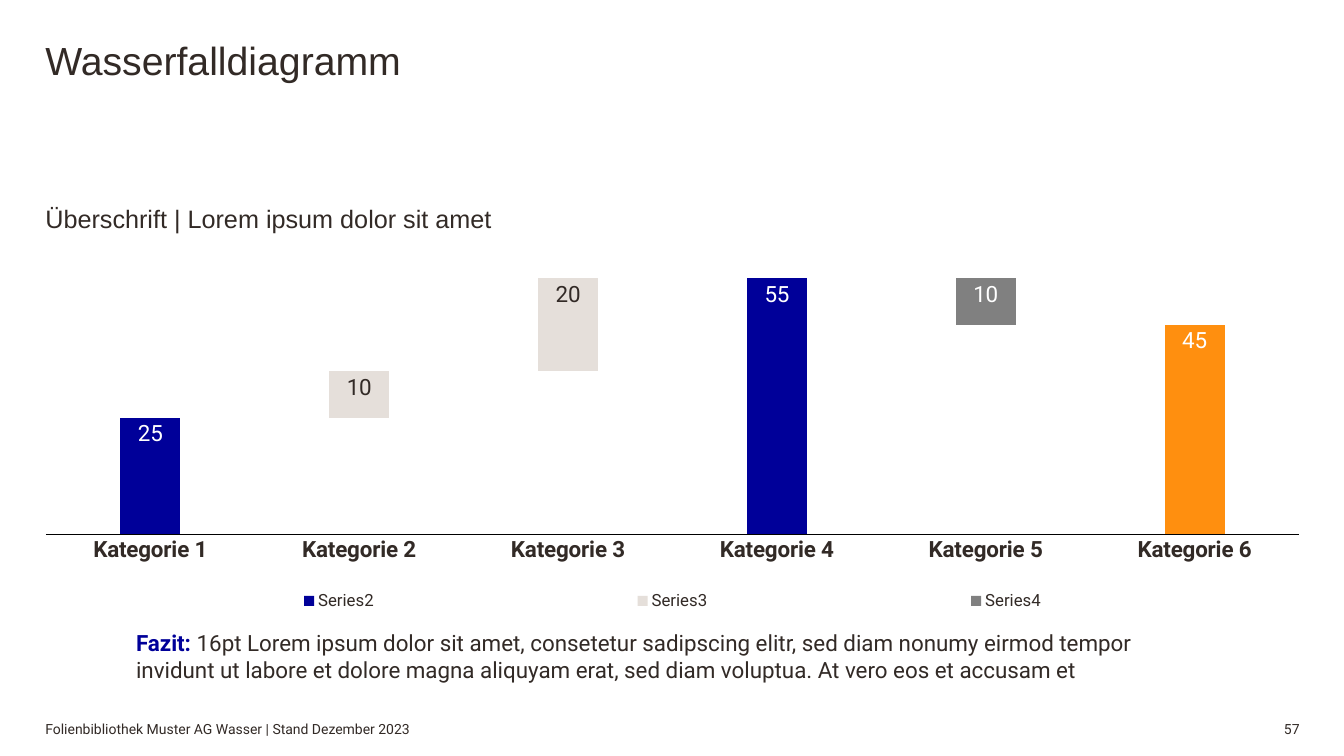
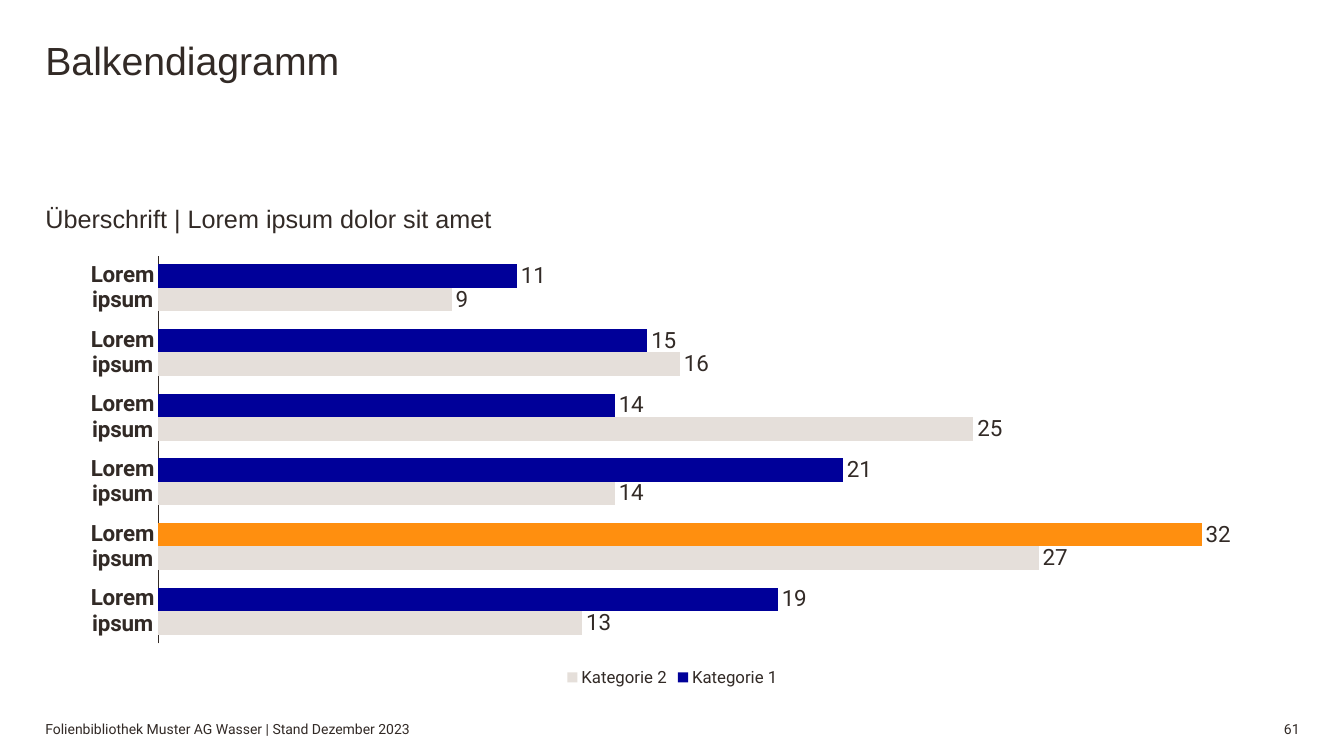
from lxml import etree
from pptx import Presentation
from pptx.chart.data import CategoryChartData as ChartData
from pptx.dml.color import RGBColor
from pptx.enum.chart import XL_CHART_TYPE as Kind
from pptx.enum.chart import XL_LABEL_POSITION as Spot
from pptx.enum.chart import XL_LEGEND_POSITION as Side
from pptx.enum.chart import XL_TICK_LABEL_POSITION as Place
from pptx.enum.chart import XL_TICK_MARK as Tick
from pptx.enum.text import MSO_ANCHOR as Anchor
from pptx.enum.text import PP_ALIGN as Align
from pptx.oxml.ns import qn
from pptx.util import Inches, Pt

# Shared style
INK, BLUE, SAND = "322A26", "000099", "E5DFDA"
GREY, ORANGE, WHITE, BLACK = "808080", "FF8F0F", "FFFFFF", "000000"
HEAD, BODY = "Arial", "Roboto"
LEFT, WIDE = 0.45, 12.44
FOOT = "Folienbibliothek Muster AG Wasser | Stand Dezember 2023"
SUB = "Überschrift | Lorem ipsum dolor sit amet"


def color(code):
    return RGBColor.from_string(code)


def style(font, size, name=BODY, tint=INK, bold=False):
    font.size, font.name, font.bold = Pt(size), name, bold
    font.color.rgb = color(tint)


# Text
def setup(frame, anchor=Anchor.TOP, wrap=True):
    frame.margin_left = frame.margin_right = 0
    frame.margin_top = frame.margin_bottom = 0
    frame.vertical_anchor, frame.word_wrap = anchor, wrap


def add_text(slide, box, text, size, name=BODY, anchor=Anchor.TOP,
             align=Align.LEFT, after=0, wrap=True):
    frame = slide.shapes.add_textbox(*map(Inches, box)).text_frame
    setup(frame, anchor, wrap)
    frame.text = text
    para = frame.paragraphs[0]
    para.alignment, para.space_after = align, Pt(after)
    for run in para.runs:
        style(run.font, size, name)
    return para


def add_page(deck, title, number):
    slide = deck.slides.add_slide(deck.slide_layouts[5])
    head = slide.shapes.title
    head.left, head.top = Inches(LEFT), Inches(0.36)
    head.width, head.height = Inches(9.61), Inches(0.55)
    setup(head.text_frame)
    head.text_frame.text = title
    para = head.text_frame.paragraphs[0]
    para.alignment = Align.LEFT
    style(para.runs[0].font, 28, HEAD)
    add_text(slide, (LEFT, 7.16, 11.06, 0.16), FOOT, 10, anchor=Anchor.BOTTOM)
    add_text(slide, (12.58, 7.16, 0.31, 0.16), number, 10,
             anchor=Anchor.BOTTOM, align=Align.RIGHT, wrap=False)
    add_text(slide, (LEFT, 2.02, WIDE, 0.35), SUB, 18, HEAD, after=4)
    return slide


def add_note(slide, lead, text):
    para = add_text(slide, (1.35, 6.15, 11.54, 0.71), lead, 16,
                    anchor=Anchor.MIDDLE, after=6)
    style(para.runs[0].font, 16, tint=BLUE, bold=True)
    for row, line in enumerate(text):
        if row:
            para.add_line_break()
        run = para.add_run()
        run.text = line
        style(run.font, 16)


# Charts
def set_layout(node, index, box, inner=False):
    for old in node.findall(qn("c:layout")):
        node.remove(old)
    layout = etree.Element(qn("c:layout"))
    node.insert(index, layout)
    manual = etree.SubElement(layout, qn("c:manualLayout"))
    items = [("layoutTarget", "inner")] if inner else []
    items += [("xMode", "edge"), ("yMode", "edge"), *zip("xywh", box)]
    for tag, val in items:
        etree.SubElement(manual, qn("c:" + tag)).set("val", str(val))


def hide_entry(legend, index):
    entry = etree.Element(qn("c:legendEntry"))
    etree.SubElement(entry, qn("c:idx")).set("val", str(index))
    etree.SubElement(entry, qn("c:delete")).set("val", "1")
    legend.insert(1, entry)


def paint(series, fill, label, spot, accent):
    series.invert_if_negative = False
    if fill is None:
        series.format.fill.background()
        return
    series.format.fill.solid()
    series.format.fill.fore_color.rgb = color(fill)
    if accent is not None:
        point = series.points[accent].format.fill
        point.solid()
        point.fore_color.rgb = color(ORANGE)
    labels = series.data_labels
    labels.show_value, labels.position = True, spot
    style(labels.font, 16, tint=label)


def add_chart(slide, kind, high, cats, rows, gap, lap, top, plot, spot,
              line=INK):
    """Each row holds name, values, fill, label colour and accent point."""
    data = ChartData()
    data.categories = cats
    for name, vals, *_ in rows:
        data.add_series(name, vals)
    box = map(Inches, (LEFT, 2.53, WIDE, high))
    chart = slide.shapes.add_chart(kind, *box, data).chart
    chart.has_title = False
    style(chart.font, 10)
    bars = chart.plots[0]
    bars.gap_width, bars.overlap, bars.vary_by_categories = gap, lap, False
    for series, (_, _, fill, label, accent) in zip(bars.series, rows):
        paint(series, fill, label, spot, accent)

    # Axes
    value, cat = chart.value_axis, chart.category_axis
    value.minimum_scale, value.maximum_scale = 0, top
    value.has_major_gridlines = value.visible = False
    cat.major_tick_mark = cat.minor_tick_mark = Tick.NONE
    cat.tick_label_position = Place.NEXT_TO_AXIS
    cat.has_major_gridlines = False
    cat.format.line.width = Pt(0.75)
    cat.format.line.color.rgb = color(line)
    style(cat.tick_labels.font, 16, bold=True)

    # Legend and plot area
    chart.has_legend = True
    chart.legend.position = Side.BOTTOM
    chart.legend.include_in_layout = False
    style(chart.legend.font, 12)
    area = chart.element.find(".//" + qn("c:plotArea"))
    set_layout(area, 0, plot, inner=True)
    return chart


def add_falls(deck):
    slide = add_page(deck, "Wasserfalldiagramm", "57")
    cats = [f"Kategorie {n}" for n in range(1, 7)]
    no = None
    rows = [
        ("Series1", (no, 25, 35, no, 45, no), no, no, no),
        ("Series2", (25, no, no, 55, no, 45), BLUE, WHITE, 5),
        ("Series3", (no, 10, 20, no, no, no), SAND, INK, no),
        ("Series4", (no, no, no, no, 10, no), GREY, WHITE, no),
    ]
    chart = add_chart(slide, Kind.COLUMN_STACKED, 3.9, cats, rows, 250, 100,
                      60, (0, 0, 1, 0.71), Spot.INSIDE_END, BLACK)
    legend = chart.element.find(".//" + qn("c:legend"))
    set_layout(legend, 1, (0, 0.84, 1, 0.08))
    hide_entry(legend, 0)
    add_note(slide, "Fazit: ", (
        "16pt Lorem ipsum dolor sit amet, consetetur sadipscing elitr, "
        "sed diam nonumy eirmod tempor",
        "invidunt ut labore et dolore magna aliquyam erat, "
        "sed diam voluptua. At vero eos et accusam et"))


def add_bars(deck):
    slide = add_page(deck, "Balkendiagramm", "61")
    rows = [
        ("Kategorie 1", (11, 15, 14, 21, 32, 19), BLUE, INK, 4),
        ("Kategorie 2", (9, 16, 25, 14, 27, 13), SAND, INK, None),
    ]
    chart = add_chart(slide, Kind.BAR_CLUSTERED, 4.33, ["Lorem ipsum"] * 6,
                      rows, 75, 0, 35, (0.09, 0, 0.91, 0.89),
                      Spot.OUTSIDE_END)
    chart.category_axis.reverse_order = True


def main():
    deck = Presentation()
    deck.slide_width, deck.slide_height = Inches(13.33), Inches(7.5)
    add_falls(deck)
    add_bars(deck)
    deck.save("out.pptx")


if __name__ == "__main__":
    main()
